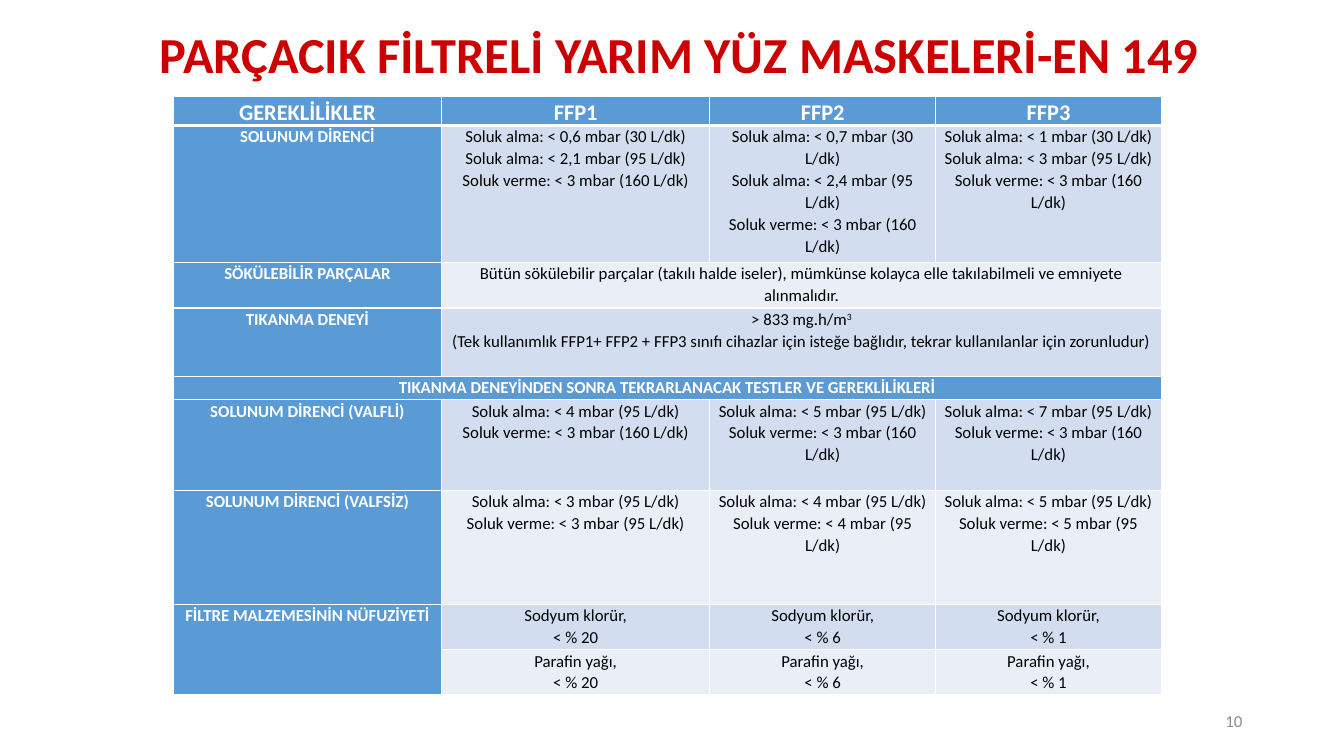
from lxml import etree
from pptx import Presentation
from pptx.dml.color import RGBColor as RGB
from pptx.enum.text import MSO_ANCHOR as Anchor, PP_ALIGN as Align
from pptx.oxml.ns import qn
from pptx.util import Inches, Pt

TITLE = "PARÇACIK FİLTRELİ YARIM YÜZ MASKELERİ-EN 149"
PAGE = "10"
ROWS = [
    ["GEREKLİLİKLER", "FFP1", "FFP2", "FFP3"],
    ["SOLUNUM DİRENCİ",
     "Soluk alma: < 0,6 mbar (30 L/dk)\nSoluk alma: < 2,1 mbar (95 L/dk)\nSoluk verme: < 3 mbar (160 L/dk)",
     "Soluk alma: < 0,7 mbar (30 L/dk)\nSoluk alma: < 2,4 mbar (95 L/dk)\nSoluk verme: < 3 mbar (160 L/dk)",
     "Soluk alma: < 1 mbar (30 L/dk)\nSoluk alma: < 3 mbar (95 L/dk)\nSoluk verme: < 3 mbar (160 L/dk)"],
    ["SÖKÜLEBİLİR PARÇALAR",
     "Bütün sökülebilir parçalar (takılı halde iseler), mümkünse kolayca elle "
     "takılabilmeli ve emniyete alınmalıdır.", None, None],
    ["TIKANMA DENEYİ",
     "> 833 mg.h/m^3\n(Tek kullanımlık FFP1+ FFP2 + FFP3 sınıfı cihazlar için isteğe "
     "bağlıdır, tekrar kullanılanlar için zorunludur)", None, None],
    ["TIKANMA DENEYİNDEN SONRA TEKRARLANACAK TESTLER VE GEREKLİLİKLERİ", None, None, None],
    ["SOLUNUM DİRENCİ (VALFLİ)",
     "Soluk alma: < 4 mbar (95 L/dk)\nSoluk verme: < 3 mbar (160 L/dk)",
     "Soluk alma: < 5 mbar (95 L/dk)\nSoluk verme: < 3 mbar (160 L/dk)",
     "Soluk alma: < 7 mbar (95 L/dk)\nSoluk verme: < 3 mbar (160 L/dk)"],
    ["SOLUNUM DİRENCİ (VALFSİZ)",
     "Soluk alma: < 3 mbar (95 L/dk)\nSoluk verme: < 3 mbar (95 L/dk)",
     "Soluk alma: < 4 mbar (95 L/dk)\nSoluk verme: < 4 mbar (95 L/dk)",
     "Soluk alma: < 5 mbar (95 L/dk)\nSoluk verme: < 5 mbar (95 L/dk)"],
    ["FİLTRE MALZEMESİNİN NÜFUZİYETİ", "Sodyum klorür,\n< % 20",
     "Sodyum klorür,\n< % 6", "Sodyum klorür,\n< % 1"],
    [None, "Parafin yağı,\n< % 20", "Parafin yağı,\n< % 6", "Parafin yağı,\n< % 1"],
]
SPANS = [(2, 1, 2, 3), (3, 1, 3, 3), (4, 0, 4, 3), (7, 0, 8, 0)]
PALE = {2, 6, 8}
WIDTHS = [2.66, 2.66, 2.24, 2.24]
HEIGHTS = [0.28, 1.36, 0.45, 0.68, 0.23, 0.9, 1.13, 0.45, 0.45]

WHITE, BLACK = RGB(255, 255, 255), RGB(0, 0, 0)
BLUE, SKY, MIST = RGB(0x5B, 0x9B, 0xD5), RGB(0xD2, 0xDE, 0xEF), RGB(0xEA, 0xEF, 0xF7)
RED, GRAY = RGB(0xCC, 0, 0), RGB(0x8C, 0x8C, 0x8C)
INSETS = {"margin_left": Inches(0.07), "margin_right": Inches(0.07),
          "margin_top": 0, "margin_bottom": 0}


def assign(item, values):
    """Set each named attribute of the item."""
    for name, value in values.items():
        setattr(item, name, value)


def write(frame, text, color, size, bold=False, align=Align.CENTER, gap=1.0):
    """Fill a text frame, one paragraph a line, raising what follows a caret."""
    for i, line in enumerate(text.split("\n")):
        para = frame.add_paragraph() if i else frame.paragraphs[0]
        assign(para, {"alignment": align, "line_spacing": gap})
        for j, part in enumerate(line.split("^")):
            run = para.add_run()
            run.text = part
            assign(run.font, {"name": "Calibri", "size": Pt(size), "bold": bold})
            run.font.color.rgb = color
            if j:
                run._r.get_or_add_rPr().set("baseline", "30000")


def label(slide, spot, text, **style):
    """Add a wrapped text box centred on its height."""
    frame = slide.shapes.add_textbox(*map(Inches, spot)).text_frame
    assign(frame, {"word_wrap": True, "vertical_anchor": Anchor.MIDDLE})
    write(frame, text, **style)


def border(cell, row):
    """Give a cell white edges, with a thick one below the header."""
    props = cell._tc.get_or_add_tcPr()
    for side in "LRTB":
        thick = (row, side) in {(0, "B"), (1, "T")}
        edge = etree.SubElement(props, qn("a:ln" + side), w=str(Pt(3 if thick else 1)))
        fill = etree.SubElement(edge, qn("a:solidFill"))
        etree.SubElement(fill, qn("a:srgbClr"), val=str(WHITE))


def grid(slide):
    """Add the table of requirements."""
    spot = (1.72, 0.96, sum(WIDTHS), sum(HEIGHTS))
    table = slide.shapes.add_table(len(ROWS), len(WIDTHS), *map(Inches, spot)).table
    assign(table, {"first_row": False, "horz_banding": False})
    for col, width in zip(table.columns, WIDTHS):
        col.width = Inches(width)
    for line, height in zip(table.rows, HEIGHTS):
        line.height = Inches(height)
    for r, texts in enumerate(ROWS):
        for c, text in enumerate(texts):
            cell = table.cell(r, c)
            head = r in (0, 4) or c == 0
            assign(cell, INSETS)
            border(cell, r)
            cell.fill.solid()
            cell.fill.fore_color.rgb = BLUE if head else MIST if r in PALE else SKY
            if text:
                write(cell.text_frame, text, WHITE if head else BLACK,
                      12 if r else 16, head, gap=1.07)
    for top, left, low, right in SPANS:
        table.cell(top, left).merge(table.cell(low, right))


def main():
    """Build and save the slide."""
    deck = Presentation()
    assign(deck, {"slide_width": Inches(13.33), "slide_height": Inches(7.5)})
    slide = deck.slides.add_slide(deck.slide_layouts[6])
    label(slide, (9.42, 6.95, 3, 0.4), PAGE, color=GRAY, size=12, align=Align.RIGHT)
    grid(slide)
    label(slide, (0.35, 0.17, 12.78, 0.8), TITLE, color=RED, size=36, bold=True, gap=0.9)
    deck.save("out.pptx")


if __name__ == "__main__":
    main()
